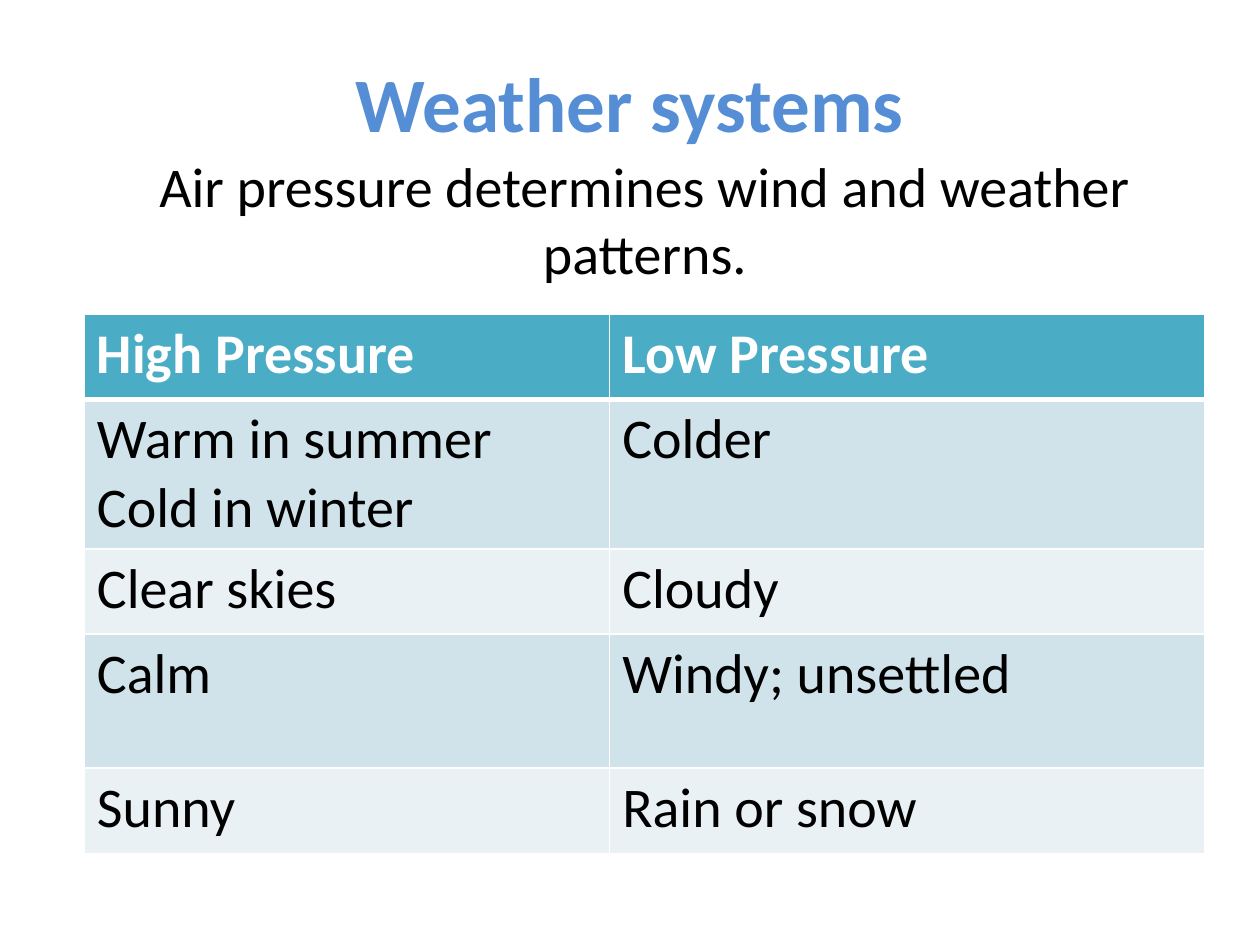
from dataclasses import dataclass

from lxml.etree import SubElement
from pptx import Presentation
from pptx.dml.color import RGBColor
from pptx.enum.text import MSO_ANCHOR, PP_ALIGN
from pptx.oxml.ns import qn
from pptx.util import Cm, Pt


@dataclass(frozen=True)
class Theme:
    font: str = "Calibri"
    title_size: int = 44
    text_size: int = 32
    title: str = "558ED5"
    text: str = "000000"
    white: str = "FFFFFF"
    header: str = "4BACC6"
    bands: tuple = ("D0E3EA", "E9F1F5")


theme = Theme()


def write(tf, text, size=theme.text_size, color=theme.text, bold=False,
          align=PP_ALIGN.LEFT, anchor=MSO_ANCHOR.TOP):
    """Fill a text frame, one paragraph for each line of text."""
    tf.word_wrap = True
    tf.vertical_anchor = anchor
    for i, line in enumerate(text.split("\n")):
        p = tf.add_paragraph() if i else tf.paragraphs[0]
        p.alignment = align
        r = p.add_run()
        r.text = line
        r.font.name = theme.font
        r.font.size = Pt(size)
        r.font.bold = bold
        r.font.color.rgb = RGBColor.from_string(color)


def set_borders(cell, bottom=1):
    tc_pr = cell._tc.get_or_add_tcPr()
    for side, width in {"L": 1, "R": 1, "T": 1, "B": bottom}.items():
        ln = SubElement(tc_pr, qn(f"a:ln{side}"), w=str(Pt(width)))
        fill = SubElement(ln, qn("a:solidFill"))
        SubElement(fill, qn("a:srgbClr"), val=theme.white)


prs = Presentation()
prs.slide_width, prs.slide_height = Cm(25.4), Cm(19.05)
s = prs.slides.add_slide(prs.slide_layouts[0])

title = s.shapes.title
title.left, title.top, title.width, title.height = Cm(1.9), Cm(0), Cm(21.6), Cm(4.08)
write(title.text_frame, "Weather systems", size=theme.title_size,
      color=theme.title, bold=True, align=PP_ALIGN.CENTER, anchor=MSO_ANCHOR.MIDDLE)

subtitle = s.placeholders[1]
subtitle.left, subtitle.top, subtitle.width, subtitle.height = (
    Cm(1.5), Cm(2.92), Cm(23), Cm(14))
write(subtitle.text_frame, "Air pressure determines wind and weather patterns.",
      align=PP_ALIGN.CENTER)

rows = [
    ("High Pressure", "Low Pressure"),
    ("Warm in summer\nCold in winter", "Colder"),
    ("Clear skies", "Cloudy"),
    ("Calm", "Windy; unsettled"),
    ("Sunny", "Rain or snow"),
]
col_widths = (Cm(10.59), Cm(12))
row_heights = (Cm(1.72), Cm(2.7))  # alternating short and tall rows
table = s.shapes.add_table(len(rows), len(col_widths), Cm(1.7), Cm(6.33),
                           sum(col_widths), Cm(10.56)).table
for column, width in zip(table.columns, col_widths):
    column.width = width

for i, texts in enumerate(rows):
    is_header = i == 0
    table.rows[i].height = row_heights[i % 2]
    fill = theme.header if is_header else theme.bands[(i - 1) % 2]
    for cell, text in zip(table.rows[i].cells, texts):
        set_borders(cell, bottom=3 if is_header else 1)
        cell.fill.solid()
        cell.fill.fore_color.rgb = RGBColor.from_string(fill)
        write(cell.text_frame, text, bold=is_header,
              color=theme.white if is_header else theme.text)

prs.save("out.pptx")
